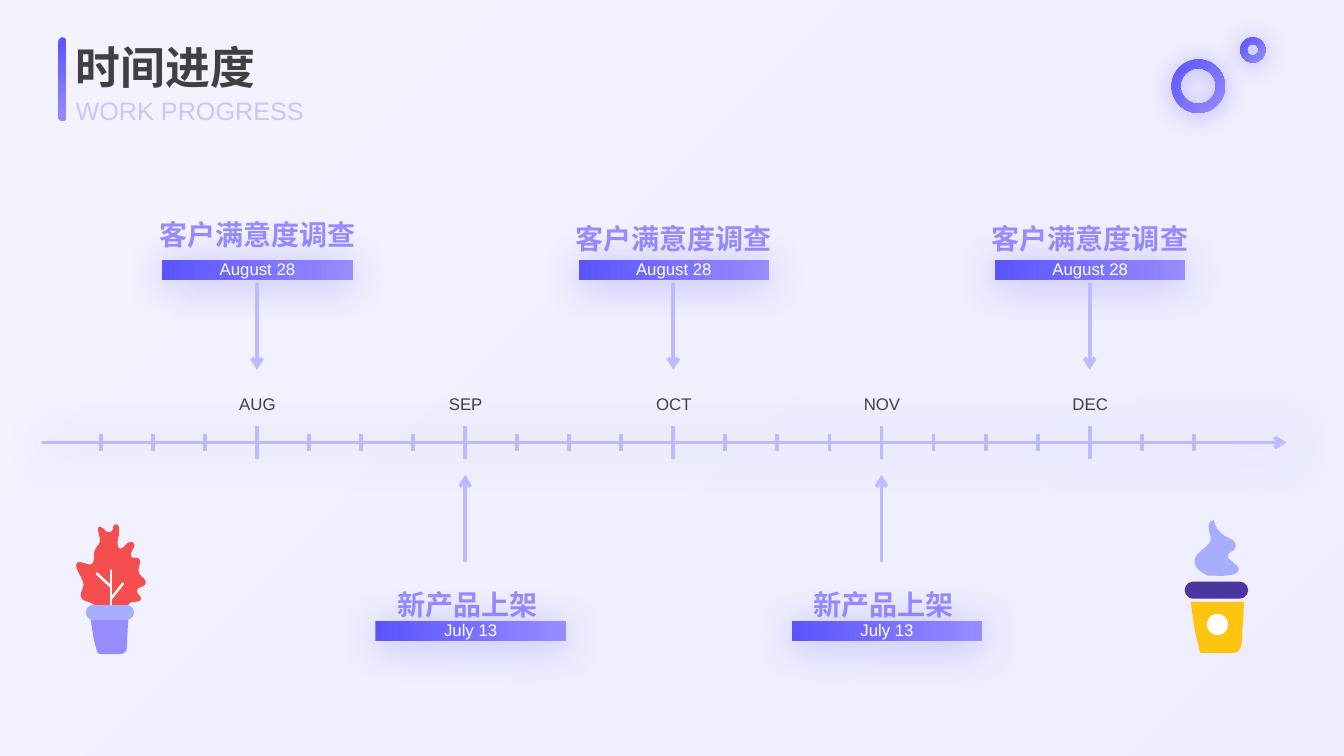
from lxml import etree
from pptx import Presentation
from pptx.dml.color import RGBColor
from pptx.enum.shapes import MSO_CONNECTOR, MSO_SHAPE
from pptx.enum.text import MSO_ANCHOR, MSO_AUTO_SIZE, PP_ALIGN
from pptx.oxml.ns import qn
from pptx.util import Pt

PX = 9144
RECT, ROUND = MSO_SHAPE.RECTANGLE, MSO_SHAPE.ROUNDED_RECTANGLE
DONUT, OVAL = MSO_SHAPE.DONUT, MSO_SHAPE.OVAL
STRAIGHT = MSO_CONNECTOR.STRAIGHT
LEFT, CENTER, JUSTIFY = PP_ALIGN.LEFT, PP_ALIGN.CENTER, PP_ALIGN.JUSTIFY
TOP, MIDDLE = MSO_ANCHOR.TOP, MSO_ANCHOR.MIDDLE
NO_FIT = MSO_AUTO_SIZE.NONE
FONT = "Arial"
COLORS = {
    "deep": "5A54FF", "violet": "978CFF", "line": "BDBBFF", "ink": "404040",
    "pale": "CAC5FF", "white": "FFFFFF", "lilac": "A7ADFF", "red": "F44E4E",
    "yellow": "FDC510", "plum": "4B369D",
}
FOLIAGE = [
    (15, 94), (18, 92, 20, 87, 19, 83), (16, 76, 10, 78, 6, 75), (1, 71, 7, 64, 7, 60),
    (6, 54, 2, 49, 0, 44), (-3, 32, 10, 41, 14, 40), (16, 39, 17, 38, 17, 36),
    (18, 32, 16, 28, 19, 24), (21, 21, 24, 19, 23, 14), (23, 11, 21, 8, 21, 5),
    (21, 4, 21, 3, 22, 3), (22, 2, 23, 2, 24, 3), (26, 3, 27, 5, 29, 7),
    (30, 8, 33, 9, 35, 7), (36, 6, 36, 5, 36, 3), (36, 1, 38, -1, 41, 1),
    (43, 2, 42, 9, 42, 11), (41, 15, 40, 18, 41, 22), (43, 28, 48, 21, 50, 19),
    (52, 18, 55, 17, 56, 18), (60, 22, 54, 26, 54, 29), (53, 31, 54, 32, 55, 33),
    (59, 35, 62, 31, 63, 37), (63, 41, 60, 45, 62, 49), (64, 53, 71, 55, 68, 60),
    (66, 63, 59, 62, 60, 67), (60, 70, 64, 71, 64, 74), (64, 76, 62, 77, 60, 77),
    (57, 77, 55, 77, 53, 78), (51, 79, 50, 82, 50, 84), (51, 86, 53, 88, 52, 90),
    (51, 92, 48, 92, 46, 92), (35, 90, 24, 89, 15, 94),
]
POT = [
    (13, 87), (15, 100, 16, 113, 20, 125), (20, 126, 20, 127, 21, 128),
    (22, 129, 23, 129, 24, 129), (29, 129, 35, 129, 40, 129),
    (45, 129, 50, 129, 50, 121), (50, 118, 51, 87, 53, 87),
]
CREAM = [
    (23, 55), (21, 54, 18, 53, 16, 51), (12, 49, 9, 44, 10, 39), (12, 30, 25, 27, 26, 19),
    (26, 15, 24, 12, 24, 8), (23, 5, 25, 0, 29, 0), (30, 7, 34, 12, 40, 16),
    (43, 17, 45, 18, 48, 20), (50, 22, 52, 25, 50, 28), (49, 30, 47, 31, 45, 32),
    (44, 33, 42, 35, 43, 37), (43, 38, 44, 39, 45, 39), (47, 42, 57, 47, 53, 51),
    (52, 53, 50, 53, 48, 54), (42, 55, 36, 56, 30, 55), (28, 55, 25, 55, 23, 55),
]
CUP = [
    (15, 131), (16, 132, 18, 132, 19, 132), (27, 132, 35, 132, 43, 132),
    (50, 132, 56, 133, 57, 119), (57, 116, 58, 96, 59, 81), (6, 81),
    (8, 96, 10, 112, 14, 126), (14, 128, 14, 129, 15, 131),
]


def rgb(name):
    return RGBColor.from_string(COLORS[name])


def emu(*lengths):
    return [round(n * PX) for n in lengths]


def sub(parent, tag, **attrs):
    return etree.SubElement(parent, qn(tag), {k: str(v) for k, v in attrs.items()})


def add_effects(s, shadow=None):
    effects = sub(s._element.spPr, "a:effectLst")
    if shadow:
        color, alpha, blur, dist = shadow
        outer = sub(effects, "a:outerShdw", blurRad=Pt(blur), dist=Pt(dist),
                    dir=5400000, algn="t", rotWithShape=0)
        sub(sub(outer, "a:srgbClr", val=COLORS[color]), "a:alpha", val=alpha * 1000)


def paint(s, fill, shadow=None):
    if isinstance(fill, str):
        s.fill.solid()
        s.fill.fore_color.rgb = rgb(fill)
    else:
        s.fill.gradient()
        s.fill.gradient_angle = fill
        for stop, name in zip(s.fill.gradient_stops, ("deep", "violet")):
            stop.color.rgb = rgb(name)
    s.line.fill.background()
    add_effects(s, shadow)


def add_shape(shapes, kind, box, fill, adj=None, shadow=None):
    s = shapes.add_shape(kind, *emu(*box))
    if adj is not None:
        s.adjustments[0] = adj
    paint(s, fill, shadow)
    return s


def add_line(shapes, x1, y1, x2, y2, color="line", width=2.75, arrow=False, cap="flat", shadow=None):
    s = shapes.add_connector(STRAIGHT, *emu(x1, y1, x2, y2))
    s.line.color.rgb = rgb(color)
    s.line.width = Pt(width)
    ln = s.line._get_or_add_ln()
    ln.set("cap", cap)
    if arrow:
        sub(ln, "a:tailEnd", type="arrow")
    add_effects(s, shadow)


def add_outline(shapes, x, y, curves, fill):
    knots = [emu(x + c[-2], y + c[-1]) for c in curves]
    builder = shapes.build_freeform(*knots[0], scale=1.0)
    builder.add_line_segments(knots[1:], close=True)
    s = builder.convert_to_shape()
    left, top = (min(axis) for axis in zip(*knots))
    for segment, curve in zip(list(s._element.iter(qn("a:lnTo"))), curves[1:]):
        if len(curve) == 6:
            bezier = etree.Element(qn("a:cubicBezTo"))
            for px, py in zip(curve[::2], curve[1::2]):
                ex, ey = emu(x + px, y + py)
                sub(bezier, "a:pt", x=ex - left, y=ey - top)
            segment.getparent().replace(segment, bezier)
    paint(s, fill)


def write(s, text, size, color, align=CENTER, bold=False, anchor=MIDDLE,
          spacing=0.9, before=10, inset=True):
    tf = s.text_frame
    tf.word_wrap = True
    tf.auto_size = NO_FIT
    tf.vertical_anchor = anchor
    if not inset:
        tf.margin_left = tf.margin_right = tf.margin_top = tf.margin_bottom = 0
    p = tf.paragraphs[0]
    p.alignment = align
    p.line_spacing = spacing
    p.space_before = Pt(before)
    r = p.add_run()
    r.text = text
    r.font.name, r.font.size, r.font.bold = FONT, Pt(size), bold
    r.font.color.rgb = rgb(color)
    return p


def add_backdrop(slide, w, h):
    s = add_shape(slide.shapes, RECT, (0, 0, w, h), 0)
    grad = s._element.spPr.find(qn("a:gradFill"))
    for clr in grad.iter(qn("a:srgbClr")):
        sub(clr, "a:alpha", val=10000)
    grad.remove(grad.find(qn("a:lin")))
    sub(sub(grad, "a:path", path="circle"), "a:fillToRect", l=100000, t=100000)
    tree = slide.shapes._spTree
    tree.remove(s._element)
    tree.insert(2, s._element)


def add_heading(slide, x, y):
    add_shape(slide.shapes, ROUND, (x, y, 8, 83), 270, 0.5)
    title, subtitle = slide.shapes.title, slide.placeholders[1]
    title.left, title.top, title.width, title.height = emu(x + 7, y + 3, 377, 56)
    subtitle.left, subtitle.top, subtitle.width, subtitle.height = emu(x + 7, y + 56, 384, 31)
    write(title, "时间进度", 32, "ink", LEFT, True, TOP)
    p = write(subtitle, "WORK PROGRESS", 18, "pale", LEFT, anchor=TOP)
    props = p._p.get_or_add_pPr()
    props.set("marL", "0")
    props.set("indent", "0")
    sub(props, "a:buNone")


def add_rings(slide, x, y):
    shadow = ("violet", 74, 16, 2)
    add_shape(slide.shapes, DONUT, (x, y + 22, 53, 53), 315, 0.167, shadow)
    add_shape(slide.shapes, DONUT, (x + 68, y, 25, 25), 315, 0.27, shadow)


def add_milestone(slide, label, date, label_box, bar_at, arrow):
    s = slide.shapes.add_textbox(*emu(*label_box))
    write(s, label, 20, "violet", JUSTIFY, True, spacing=1.3, before=0)
    bar = add_shape(slide.shapes, RECT, (*bar_at, 189, 20), 0, shadow=("deep", 40, 30, 3))
    write(bar, date, 12, "white", inset=False)
    add_line(slide.shapes, *arrow, arrow=True, cap="rnd")


def add_timeline(slide, x, y, w):
    shapes = slide.shapes.add_group_shape().shapes
    add_line(shapes, x, y, x + w, y, arrow=True, cap="rnd", shadow=("deep", 40, 34, 1))
    ticks = [x + 57 + i * 1084 / 21 for i in range(22)]
    majors = ticks[3::4]
    for tick in ticks:
        half = 16 if tick in majors else 8
        add_line(shapes, tick, y - half, tick, y + half)
    for month, tick in zip(("AUG", "SEP", "OCT", "NOV", "DEC"), majors):
        s = shapes.add_textbox(*emu(tick - 20, y - 46, 41, 22))
        write(s, month, 12, "ink", anchor=TOP, inset=False)
    for i, tick in enumerate(majors):
        if i % 2:
            add_milestone(slide, "新产品上架", "July 13", (tick - 77, y + 137, 196, 37),
                          (tick - 89, y + 177), (tick, y + 117, tick, y + 32))
        else:
            add_milestone(slide, "客户满意度调查", "August 28",
                          (tick - 107, y - 227, 229, 38 if i else 30),
                          (tick - 94, y - 181), (tick, y - 157, tick, y - 72))


def add_plant(slide, x, y):
    shapes = slide.shapes.add_group_shape().shapes
    add_outline(shapes, x, y, FOLIAGE, "red")
    for x1, y1, x2, y2 in ((34, 46, 34, 92), (34, 74, 46, 59), (34, 62, 20, 49)):
        add_line(shapes, x + x1, y + y1, x + x2, y + y2, "white", 1.75, cap="rnd")
    add_outline(shapes, x, y, POT, "violet")
    add_shape(shapes, ROUND, (x + 9, y + 80, 48, 15), "lilac", 0.5)


def add_cup(slide, x, y):
    shapes = slide.shapes.add_group_shape().shapes
    add_outline(shapes, x, y, CUP, "yellow")
    add_shape(shapes, OVAL, (x + 22, y + 93, 21, 21), "white")
    add_outline(shapes, x, y, CREAM, "lilac")
    add_shape(shapes, ROUND, (x, y + 61, 63, 17), "plum", 0.5)


def main():
    prs = Presentation()
    prs.slide_width, prs.slide_height = emu(1333, 750)
    slide = prs.slides.add_slide(prs.slide_layouts[1])
    add_backdrop(slide, 1333, 750)
    add_heading(slide, 58, 37)
    add_rings(slide, 1162, 37)
    add_timeline(slide, 43, 439, 1233)
    add_plant(slide, 76, 520)
    add_cup(slide, 1175, 516)
    prs.save("out.pptx")


if __name__ == "__main__":
    main()
